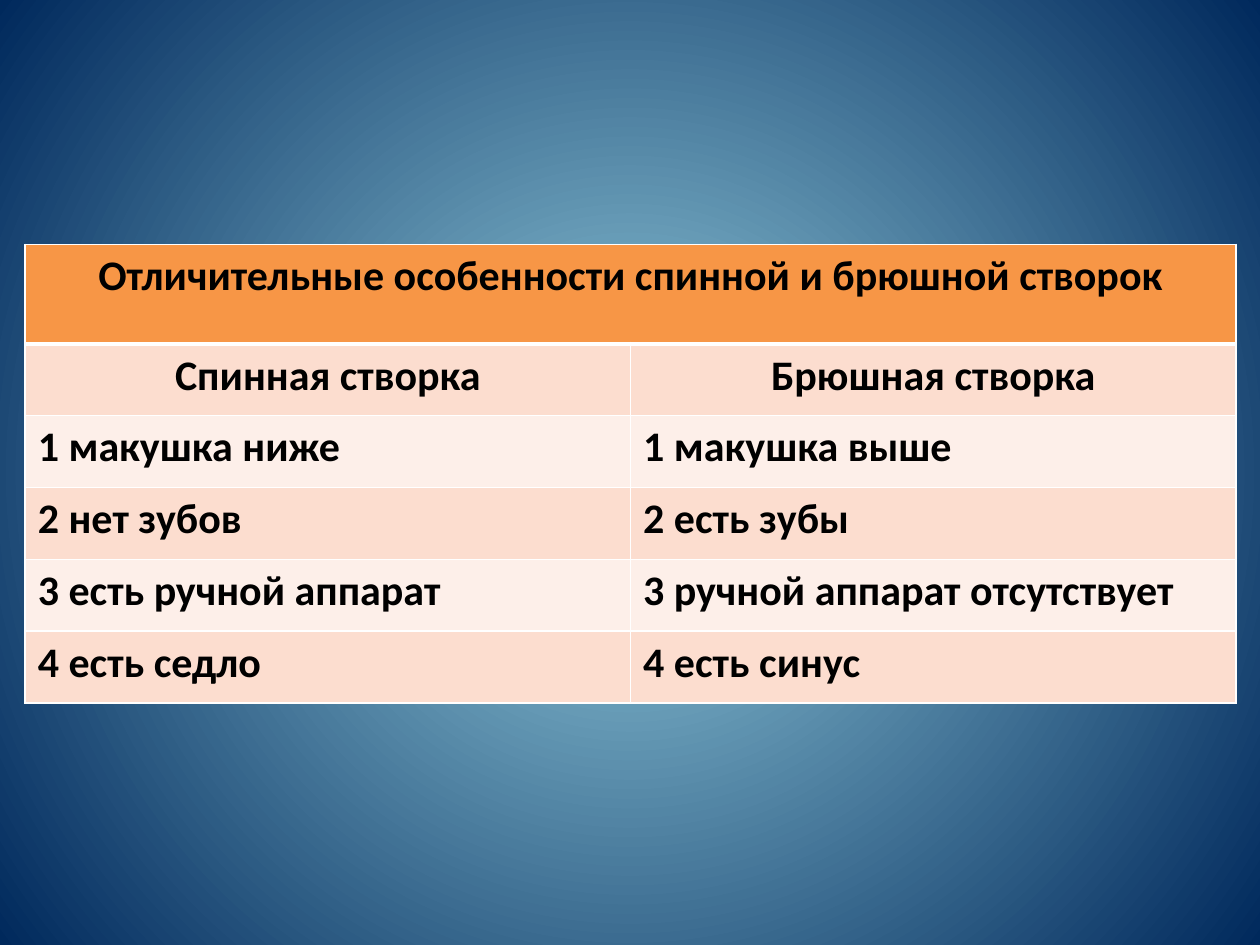
from dataclasses import dataclass

from lxml.etree import SubElement
from pptx import Presentation
from pptx.dml.color import RGBColor as Rgb
from pptx.enum.text import PP_ALIGN as Align
from pptx.oxml.ns import qn
from pptx.util import Inches, Pt


@dataclass(frozen=True)
class Theme:
    font: str = "Calibri"
    text_size: int = 24
    text: str = "000000"
    glow: str = "93CDDD"
    edge: str = "00295C"
    heading: str = "F79646"
    bands: tuple = ("FCDDCF", "FDEFE9")
    grid: str = "FFFFFF"
    thin: int = 1
    thick: int = 3


THEME = Theme()
HEADING = "Отличительные особенности спинной и брюшной створок"
VALVES = [
    ("Спинная створка", "Брюшная створка"),
    ("1 макушка ниже", "1 макушка выше"),
    ("2 нет зубов", "2 есть зубы"),
    ("3 есть ручной аппарат", "3 ручной аппарат отсутствует"),
    ("4 есть седло", "4 есть синус"),
]


def paint_background(slide):
    fill = slide.background.fill
    fill.gradient()
    stops = zip(fill.gradient_stops, (THEME.glow, THEME.edge), (0, 1))
    for stop, color, position in stops:
        stop.color.rgb = Rgb.from_string(color)
        stop.position = position
    gradient = slide.element.find(".//" + qn("a:gradFill"))
    gradient.remove(gradient.find(qn("a:lin")))
    circle = SubElement(gradient, qn("a:path"), {"path": "circle"})
    center = {side: "50000" for side in "ltrb"}
    SubElement(circle, qn("a:fillToRect"), center)


def draw_borders(cell, top, bottom):
    properties = cell._tc.get_or_add_tcPr()
    widths = {"L": THEME.thin, "R": THEME.thin, "T": top, "B": bottom}
    for side, width in widths.items():
        line = SubElement(properties, qn(f"a:ln{side}"), {"w": str(Pt(width))})
        solid = SubElement(line, qn("a:solidFill"))
        SubElement(solid, qn("a:srgbClr"), {"val": THEME.grid})


def style_cell(cell, color, top=THEME.thin, bottom=THEME.thin):
    draw_borders(cell, top, bottom)
    cell.fill.solid()
    cell.fill.fore_color.rgb = Rgb.from_string(color)


def write_cell(cell, wording, align):
    paragraph = cell.text_frame.paragraphs[0]
    paragraph.alignment = align
    run = paragraph.add_run()
    run.text = wording
    run.font.name = THEME.font
    run.font.size = Pt(THEME.text_size)
    run.font.bold = True
    run.font.color.rgb = Rgb.from_string(THEME.text)


def add_comparison(slide):
    heading_height, row_height = Inches(0.79), Inches(0.57)
    height = heading_height + row_height * len(VALVES)
    comparison = slide.shapes.add_table(
        len(VALVES) + 1, 2, Inches(0.2), Inches(1.94), Inches(9.61), height
    ).table
    for row in comparison.rows:
        row.height = row_height
    comparison.rows[0].height = heading_height

    heading = comparison.cell(0, 0)
    heading.merge(comparison.cell(0, 1))
    for column in range(2):
        style_cell(comparison.cell(0, column), THEME.heading, bottom=THEME.thick)
    write_cell(heading, HEADING, Align.CENTER)

    for index, features in enumerate(VALVES):
        align = Align.LEFT if index else Align.CENTER
        top = THEME.thin if index else THEME.thick
        for column, feature in enumerate(features):
            cell = comparison.cell(index + 1, column)
            style_cell(cell, THEME.bands[index % 2], top=top)
            write_cell(cell, feature, align)


def main():
    deck = Presentation()
    deck.slide_width, deck.slide_height = Inches(10), Inches(7.5)
    slide = deck.slides.add_slide(deck.slide_layouts[6])
    paint_background(slide)
    add_comparison(slide)
    deck.save("out.pptx")


if __name__ == "__main__":
    main()
